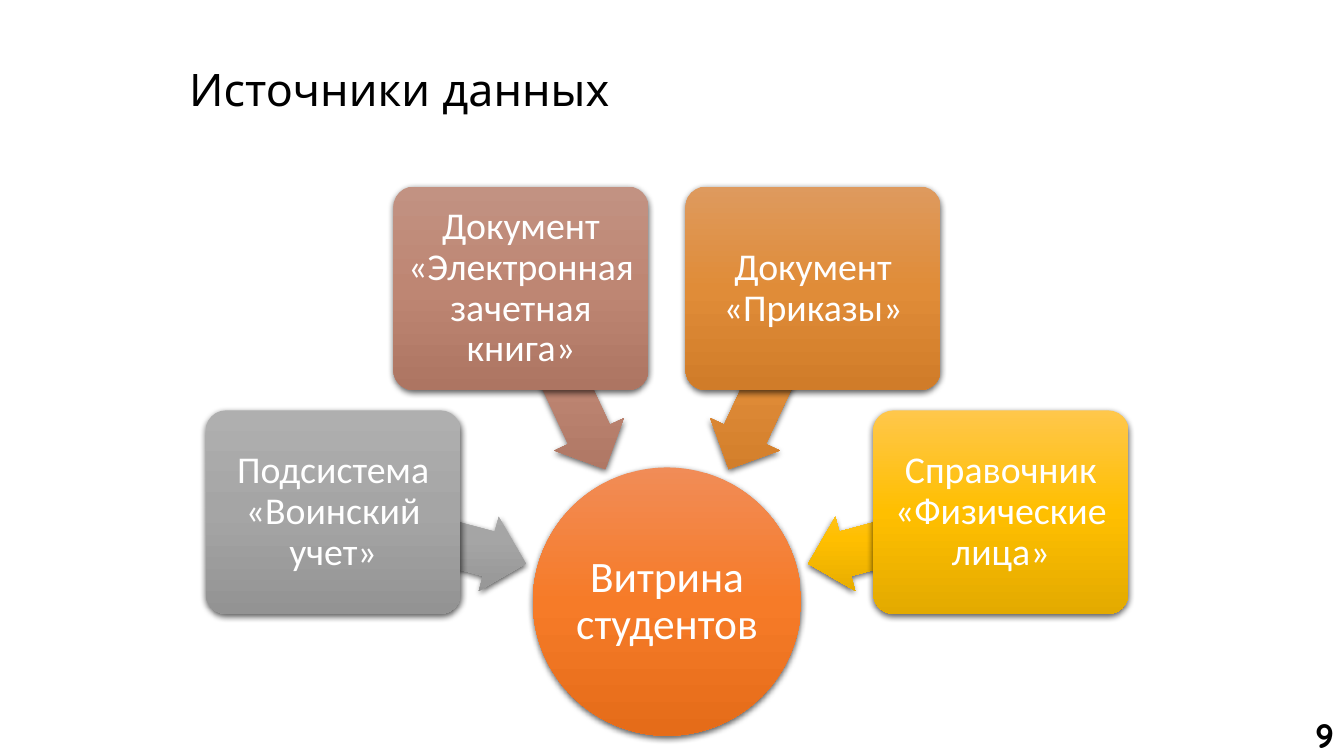
from dataclasses import dataclass
from math import cos, radians, sin

from lxml import etree
from pptx import Presentation
from pptx.dml.color import RGBColor
from pptx.enum.shapes import MSO_SHAPE
from pptx.enum.text import MSO_ANCHOR, PP_ALIGN
from pptx.oxml.ns import qn
from pptx.util import Cm, Pt

ELLIPSE, ROUND_RECT, ARROW = MSO_SHAPE.OVAL, MSO_SHAPE.ROUNDED_RECTANGLE, MSO_SHAPE.LEFT_ARROW
MIDDLE, TOP = MSO_ANCHOR.MIDDLE, MSO_ANCHOR.TOP
LEFT, CENTER, RIGHT = PP_ALIGN.LEFT, PP_ALIGN.CENTER, PP_ALIGN.RIGHT


@dataclass(frozen=True)
class Theme:
    heading_font: str = "Quicksand"
    body_font: str = "Calibri"
    ink: str = "000000"
    on_fill: str = "FFFFFF"
    title_size: int = 32
    hub_size: int = 31
    source_size: int = 27
    number_size: int = 24
    # Gradients: top, middle, bottom
    orange: tuple = ("F18C57", "F67B28", "E56C19")
    gray: tuple = ("AFAFAF", "A5A5A5", "939393")
    brown: tuple = ("C29282", "BE8673", "AD7562")
    amber: tuple = ("DE9A5E", "E08C38", "D07C29")
    yellow: tuple = ("FFC74B", "FFBF00", "E3AA00")


THEME = Theme()

# Angle around the hub, label, gradient
SOURCES = [
    (15, "Подсистема «Воинский учет»", THEME.gray),
    (65, "Документ «Электронная зачетная книга»", THEME.brown),
    (115, "Документ «Приказы»", THEME.amber),
    (165, "Справочник «Физические лица»", THEME.yellow),
]


def add_child(parent, tag, **attrs):
    return etree.SubElement(parent, qn(tag), attrs)


def style_shape(sp, gradient):
    """Vertical three-stop gradient, no outline, soft shadow below."""
    sp.line.fill.background()
    sp.fill.gradient()
    sp.fill.gradient_angle = 270
    grad = sp.element.spPr.find(qn("a:gradFill"))
    grad.set("rotWithShape", "0")
    stops = grad.find(qn("a:gsLst"))
    for stop in list(stops):
        stops.remove(stop)
    for i, color in enumerate(gradient):
        stop = add_child(stops, "a:gs", pos=str(i * 50000))
        add_child(stop, "a:srgbClr", val=color)

    sp.shadow.inherit = False
    effects = sp.element.spPr.find(qn("a:effectLst"))
    shadow = add_child(effects, "a:outerShdw", blurRad=str(Pt(4.5)), dist=str(Pt(1.5)),
                       dir="5400000", algn="ctr", rotWithShape="0")
    color = add_child(shadow, "a:srgbClr", val="000000")
    add_child(color, "a:alpha", val="63000")


def set_text(sp, text, font, size, color, align=CENTER, anchor=MIDDLE, inset=None,
             spacing=None, bold=False):
    tf = sp.text_frame
    tf.word_wrap = True
    tf.vertical_anchor = anchor
    if inset is not None:
        tf.margin_left = tf.margin_right = tf.margin_top = tf.margin_bottom = Cm(inset)
    p = tf.paragraphs[0]
    p.text = text
    p.alignment = align
    p.line_spacing = spacing
    p.font.name, p.font.size, p.font.bold = font, Pt(size), bold
    p.font.color.rgb = RGBColor.from_string(color)


def add_centered(s, kind, cx, cy, w, h, gradient):
    sp = s.shapes.add_shape(kind, Cm(cx - w / 2), Cm(cy - h / 2), Cm(w), Cm(h))
    style_shape(sp, gradient)
    return sp


def add_title(s, x, y, w, h):
    sp = s.shapes.add_textbox(Cm(x), Cm(y), Cm(w), Cm(h))
    set_text(sp, "Источники данных", THEME.heading_font, THEME.title_size, THEME.ink,
             align=LEFT, spacing=0.9)


def add_page_number(s, x, y, w, h):
    sp = s.shapes.add_textbox(Cm(x), Cm(y), Cm(w), Cm(h))
    set_text(sp, "9", THEME.heading_font, THEME.number_size, THEME.ink,
             align=RIGHT, anchor=TOP, bold=True)


def add_source_fan(s, x, y, w, h):
    """Hub at the bottom centre, sources on an arc with arrows to the hub."""
    hub_d, box_w, box_h = 6.76, 6.43, 5.13
    arrow_r, box_r = 6.2, 8.71
    cx, cy = x + w / 2, y + h - hub_d / 2

    hub = add_centered(s, ELLIPSE, cx, cy, hub_d, hub_d, THEME.orange)
    set_text(hub, "Витрина студентов", THEME.body_font, THEME.hub_size, THEME.on_fill,
             inset=0.04, spacing=0.9)

    for angle, label, gradient in SOURCES:
        dx, dy = -cos(radians(angle)), -sin(radians(angle))
        arrow = add_centered(s, ARROW, cx + arrow_r * dx, cy + arrow_r * dy, 5.03, 1.93, gradient)
        arrow.adjustments[0], arrow.adjustments[1] = 0.6, 0.5
        arrow.rotation = 180 + angle

        box = add_centered(s, ROUND_RECT, cx + box_r * dx, cy + box_r * dy, box_w, box_h, gradient)
        box.adjustments[0] = 0.1
        set_text(box, label, THEME.body_font, THEME.source_size, THEME.on_fill,
                 inset=0.15, spacing=0.9)


def main():
    prs = Presentation()
    prs.slide_width, prs.slide_height = Cm(33.87), Cm(19.05)
    s = prs.slides.add_slide(prs.slide_layouts[6])
    add_page_number(s, 31.19, 17.88, 2.67, 1.3)
    add_source_fan(s, 5.18, 4.7, 23.26, 13.84)
    add_title(s, 4.52, 0.48, 24.56, 3.68)
    prs.save("out.pptx")


if __name__ == "__main__":
    main()
